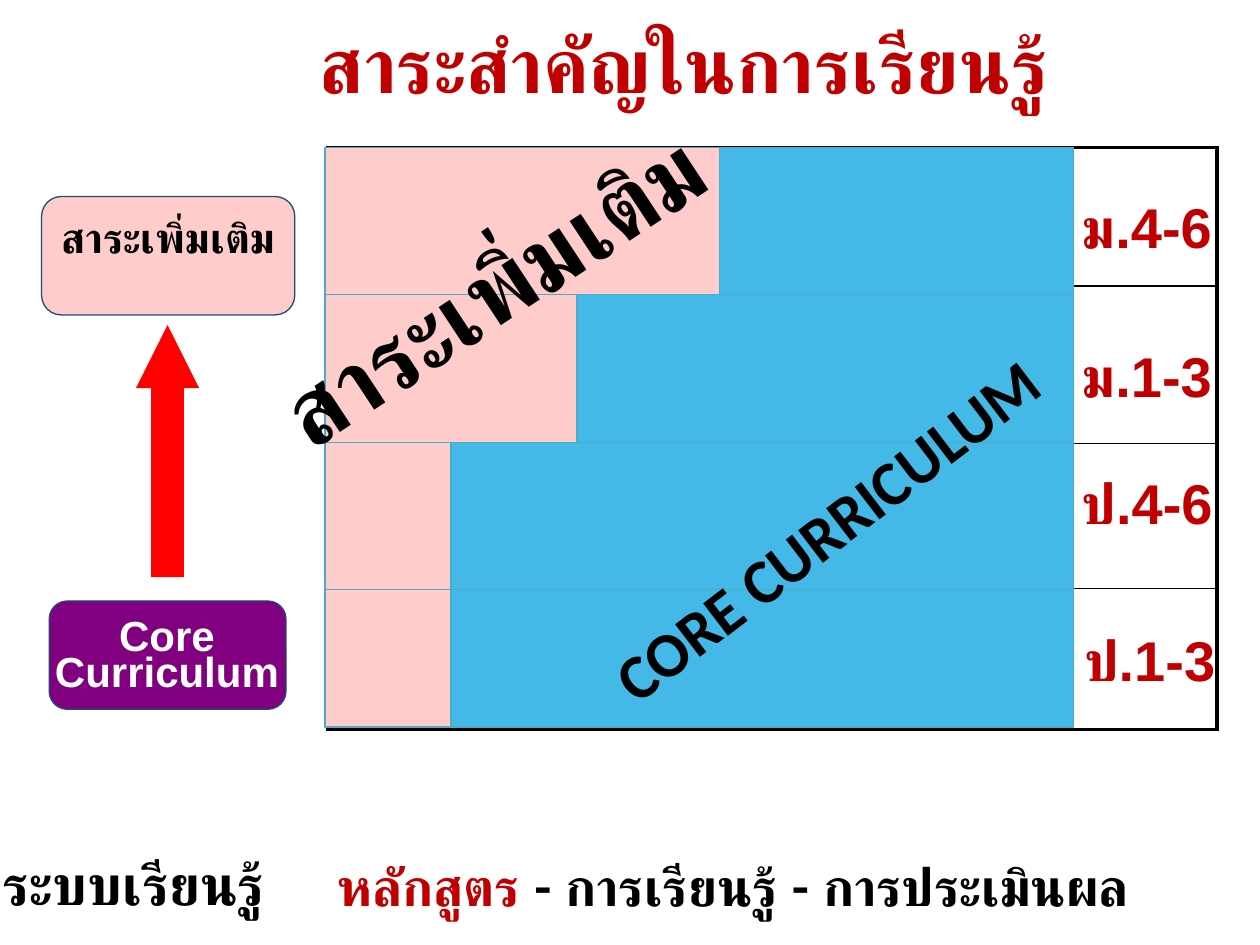
from lxml import etree
from pptx import Presentation
from pptx.dml.color import RGBColor as RGB
from pptx.enum.shapes import MSO_SHAPE as SHAPE
from pptx.enum.text import MSO_ANCHOR as ANCHOR, MSO_AUTO_SIZE as AUTO, PP_ALIGN as ALIGN
from pptx.oxml.ns import qn
from pptx.util import Inches, Pt

COLORS = {"black": "000000", "white": "FFFFFF", "crimson": "C00000", "red": "FF0000",
          "pink": "FFCCCC", "sky": "44B9E8", "teal": "4BACC6", "purple": "800080",
          "navy": "1F497D"}

prs = Presentation()
prs.slide_width, prs.slide_height = Inches(10), Inches(7.5)
s = prs.slides.add_slide(prs.slide_layouts[5])


def add_block(kind, box, fill, line=None):
    sp = s.shapes.add_shape(kind, *map(Inches, box))
    sp.shadow.inherit = False
    sp.fill.solid()
    sp.fill.fore_color.rgb = RGB.from_string(COLORS[fill])
    if line:
        sp.line.color.rgb = RGB.from_string(COLORS[line])
        sp.line.width = Pt(0.75)
    else:
        sp.line.fill.background()
    return sp


def add_text(box, runs, size, font="Lato", align=ALIGN.LEFT, anchor=ANCHOR.TOP,
             wrap=True, sp=None):
    sp = sp or s.shapes.add_textbox(0, 0, 0, 0)
    sp.left, sp.top, sp.width, sp.height = map(Inches, box)
    tf = sp.text_frame
    tf.auto_size = AUTO.NONE
    tf.word_wrap = wrap
    tf.vertical_anchor = anchor
    p = tf.paragraphs[0]
    p.alignment = align
    for text, color in runs:
        r = p.add_run()
        r.text = text
        r.font.size = Pt(size)
        r.font.bold = True
        r.font.name = font
        r.font.color.rgb = RGB.from_string(COLORS[color])
        etree.SubElement(r.font._element, qn("a:cs")).set("typeface", font)
    return sp


add_text((1.35, 0.08, 8.31, 0.84), [("สาระสำคัญในการเรียนรู้ ", "crimson")], 44,
         align=ALIGN.CENTER, sp=s.shapes.title)

row_heights = [1.1, 1.25, 1.15, 1.12]
frame = s.shapes.add_table(4, 1, Inches(2.59), Inches(1.17), Inches(7.07), Inches(4.62))
table = frame.table
table.first_row = table.horz_banding = False
for i, height in enumerate(row_heights):
    table.rows[i].height = Inches(height)
    cell = table.cell(i, 0)
    tcPr = cell._tc.get_or_add_tcPr()
    widths = {"L": 1, "R": 2.25, "T": 2.25 if i == 0 else 1, "B": 2.25 if i == 3 else 1}
    for side, width in widths.items():
        ln = etree.SubElement(tcPr, qn(f"a:ln{side}"), w=str(Pt(width)))
        fill = etree.SubElement(ln, qn("a:solidFill"))
        etree.SubElement(fill, qn("a:srgbClr"), val=COLORS["black"])
    cell.fill.background()

add_text((-0.08, 6.69, 2.5, 0.64), [("ระบบเรียนรู้", "black")], 32)
add_text((2.58, 6.73, 7.29, 0.61),
         [("หลักสูตร ", "crimson"), ("- การเรียนรู้ - การประเมินผล", "black")], 30, wrap=False)

add_block(SHAPE.ROUNDED_RECTANGLE, (0.33, 1.56, 2.01, 0.94), "pink", "navy")
add_text((0.17, 1.63, 2.33, 0.56), [("สาระเพิ่มเติม", "black")], 24, align=ALIGN.CENTER)
add_block(SHAPE.ROUNDED_RECTANGLE, (0.39, 4.77, 1.88, 0.86), "purple", "navy")
core = add_text((0.23, 4.9, 2.19, 0.7), [("Core Curriculum", "white")], 24, "Arial", ALIGN.CENTER)
core.text_frame.paragraphs[0].line_spacing = 0.7

arrow = add_block(SHAPE.UP_ARROW, (1.08, 2.58, 0.5, 2), "red")
arrow.adjustments[0], arrow.adjustments[1] = 0.52, 1

grades = [("ม.4-6", 8.67, 1.48), ("ม.1-3", 8.67, 2.66), ("ป.4-6", 8.67, 3.67), ("ป.1-3", 8.69, 4.92)]
for grade, left, top in grades:
    add_text((left, top, 0.87, 0.63), [(grade, "crimson")], 32, "Arial",
             ALIGN.CENTER, ANCHOR.MIDDLE, wrap=False)

bar_left, bar_right, bar_top, bar_step = 2.58, 8.52, 1.17, 1.17
bars = [(4.61, 5.71, 1.17), (3.59, 4.58, 1.17), (2.58, 3.58, 1.17), (1.33, 3.58, 1.09)]
for i, (extra_width, core_left, height) in enumerate(bars):
    top = bar_top + i * bar_step
    add_block(SHAPE.FLOWCHART_PROCESS, (bar_left, top, extra_width, height), "pink", "teal")
    add_block(SHAPE.FLOWCHART_PROCESS, (core_left, top, bar_right - core_left, height), "sky", "teal")

extra = add_text((1.37, 1.85, 5.07, 0.86), [("สาระเพิ่มเติม", "black")], 54, "Calibri",
                 ALIGN.CENTER, ANCHOR.MIDDLE)
extra.rotation = 326.6
core = add_text((4.34, 3.62, 4.74, 0.8), [("CORE CURRICULUM", "black")], 36, "Calibri",
                anchor=ANCHOR.BOTTOM)
core.rotation = 322.6

prs.save("out.pptx")
